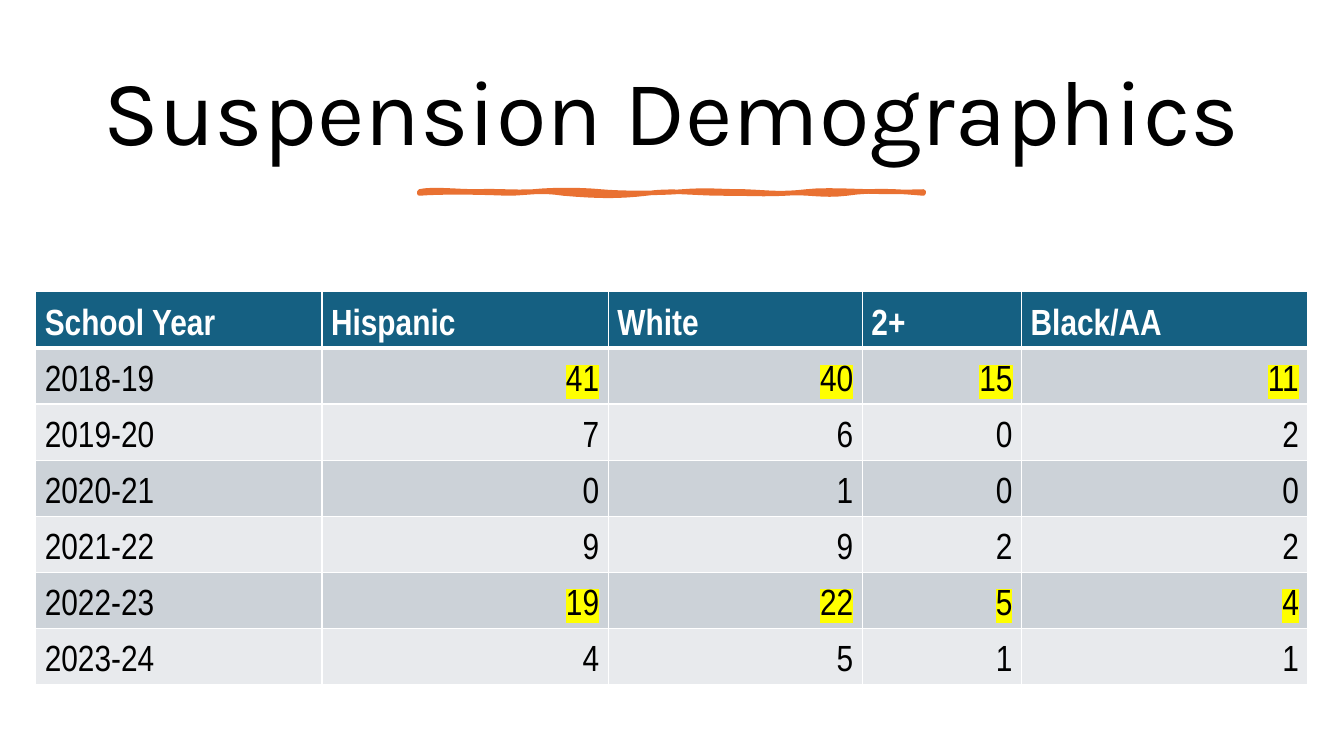
import pptx
import pptx.util
import pptx.dml.color
import pptx.enum.text
import lxml.etree
from pptx.oxml.ns import qn

Pt = pptx.util.Pt
RGB = pptx.dml.color.RGBColor
ALIGN = pptx.enum.text.PP_ALIGN
ANCHOR = pptx.enum.text.MSO_ANCHOR

BLACK = RGB(0x00, 0x00, 0x00)
WHITE = RGB(0xFF, 0xFF, 0xFF)
ORANGE = RGB(0xE9, 0x71, 0x32)
TEAL = RGB(0x15, 0x60, 0x82)
DARK = RGB(0xCC, 0xD2, 0xD8)
LIGHT = RGB(0xE8, 0xEA, 0xED)
YELLOW = RGB(0xFF, 0xFF, 0x00)


def add_color(parent, color):
    item = lxml.etree.SubElement(parent, qn("a:srgbClr"))
    item.set("val", str(color))


def style_run(run, font, size, color, bold=False):
    run.font.name = font
    run.font.size = Pt(size)
    run.font.bold = bold
    run.font.color.rgb = color


deck = pptx.Presentation()
deck.slide_width, deck.slide_height = Pt(960), Pt(540)
slide = deck.slides.add_slide(deck.slide_layouts[6])

# Title
title = slide.shapes.add_textbox(Pt(50.4), Pt(33.1), Pt(859), Pt(98.6))
frame = title.text_frame
frame.word_wrap = True
frame.vertical_anchor = ANCHOR.MIDDLE
frame.text = "Suspension Demographics"
para = frame.paragraphs[0]
para.alignment = ALIGN.CENTER
para.line_spacing = 0.9
style_run(para.runs[0], "Karla", 66, BLACK)

# Brush stroke: each curve has two control points and an end point
start = (299.5, 136.8)
curves = [
    [(308.2, 134.6), (326.9, 136.8), (340.6, 136.8)],
    [(354.2, 136.1), (366.5, 137.5), (380.9, 136.8)],
    [(395.3, 135.4), (413.3, 135.4), (429.1, 136.8)],
    [(444.2, 138.2), (470.2, 138.2), (487.4, 136.8)],
    [(505.4, 135.4), (514.1, 136.8), (532.1, 136.8)],
    [(549.4, 137.5), (557.3, 139), (576, 136.8)],
    [(594.7, 134.6), (624.2, 138.2), (659.5, 136.8)],
    [(660.2, 137.5), (659.5, 137.5), (659.5, 138.2)],
    [(644.4, 136.8), (622.8, 135.4), (604.8, 138.2)],
    [(586.8, 140.4), (576.7, 136.8), (560.9, 138.2)],
    [(544.3, 139), (537.8, 138.2), (516.2, 138.2)],
    [(494.6, 138.2), (480.2, 135.4), (461.5, 138.2)],
    [(442.1, 140.4), (428.4, 140.4), (402.5, 138.2)],
    [(384.5, 135.4), (376.6, 138.2), (362.2, 138.2)],
    [(347.8, 137.5), (315.4, 136.8), (299.5, 138.2)],
]
steps = 8
points = []
last = start
for one, two, end in curves:
    for step in range(1, steps + 1):
        t = step / steps
        u = 1 - t
        points.append(tuple(
            Pt(u**3 * a + 3 * u * u * t * b + 3 * u * t * t * c + t**3 * d)
            for a, b, c, d in zip(last, one, two, end)))
    last = end
pen = slide.shapes.build_freeform(Pt(start[0]), Pt(start[1]), scale=1.0)
pen.add_line_segments(points, close=True)
stroke = pen.convert_to_shape()
stroke.shadow.inherit = False
stroke.fill.solid()
stroke.fill.fore_color.rgb = ORANGE
stroke.line.color.rgb = ORANGE
stroke.line.width = Pt(3.25)
lxml.etree.SubElement(stroke.line._get_or_add_ln(), qn("a:round"))

# Table
rows = [
    ["School Year", "Hispanic", "White", "2+", "Black/AA"],
    ["2018-19", "41", "40", "15", "11"],
    ["2019-20", "7", "6", "0", "2"],
    ["2020-21", "0", "1", "0", "0"],
    ["2021-22", "9", "9", "2", "2"],
    ["2022-23", "19", "22", "5", "4"],
    ["2023-24", "4", "5", "1", "1"],
]
marked = ("2018-19", "2022-23")
widths = [204.5, 204.5, 181.5, 113.8, 204.5]
tall = 40.1
table = slide.shapes.add_table(
    len(rows), len(widths), Pt(25.5), Pt(208.4),
    Pt(sum(widths)), Pt(tall * len(rows))).table
for col, width in zip(table.columns, widths):
    col.width = Pt(width)

for r, row in enumerate(rows):
    table.rows[r].height = Pt(tall)
    head = r == 0
    for c, text in enumerate(row):
        cell = table.cell(r, c)
        cell.vertical_anchor = ANCHOR.BOTTOM
        cell.margin_left = cell.margin_right = Pt(6.5)
        cell.margin_top = cell.margin_bottom = Pt(3.6)
        cell.fill.solid()
        cell.fill.fore_color.rgb = TEAL if head else DARK if r % 2 else LIGHT
        cell.text_frame.text = text
        para = cell.text_frame.paragraphs[0]
        number = c > 0 and not head
        para.alignment = ALIGN.RIGHT if number else ALIGN.LEFT
        run = para.runs[0]
        style_run(run, "Arial Narrow", 26, WHITE if head else BLACK, head)

        # Yellow highlight on the marked years
        if number and row[0] in marked:
            glow = lxml.etree.Element(qn("a:highlight"))
            add_color(glow, YELLOW)
            run.font._element.find(qn("a:solidFill")).addnext(glow)

        # White borders, heavier below the header
        heavy = {0: "B", 1: "T"}.get(r)
        props = cell._tc.get_or_add_tcPr()
        for i, side in enumerate("LRTB"):
            edge = lxml.etree.Element(qn("a:ln" + side))
            edge.set("w", str(Pt(3 if side == heavy else 1)))
            add_color(lxml.etree.SubElement(edge, qn("a:solidFill")), WHITE)
            props.insert(i, edge)

deck.save("out.pptx")
